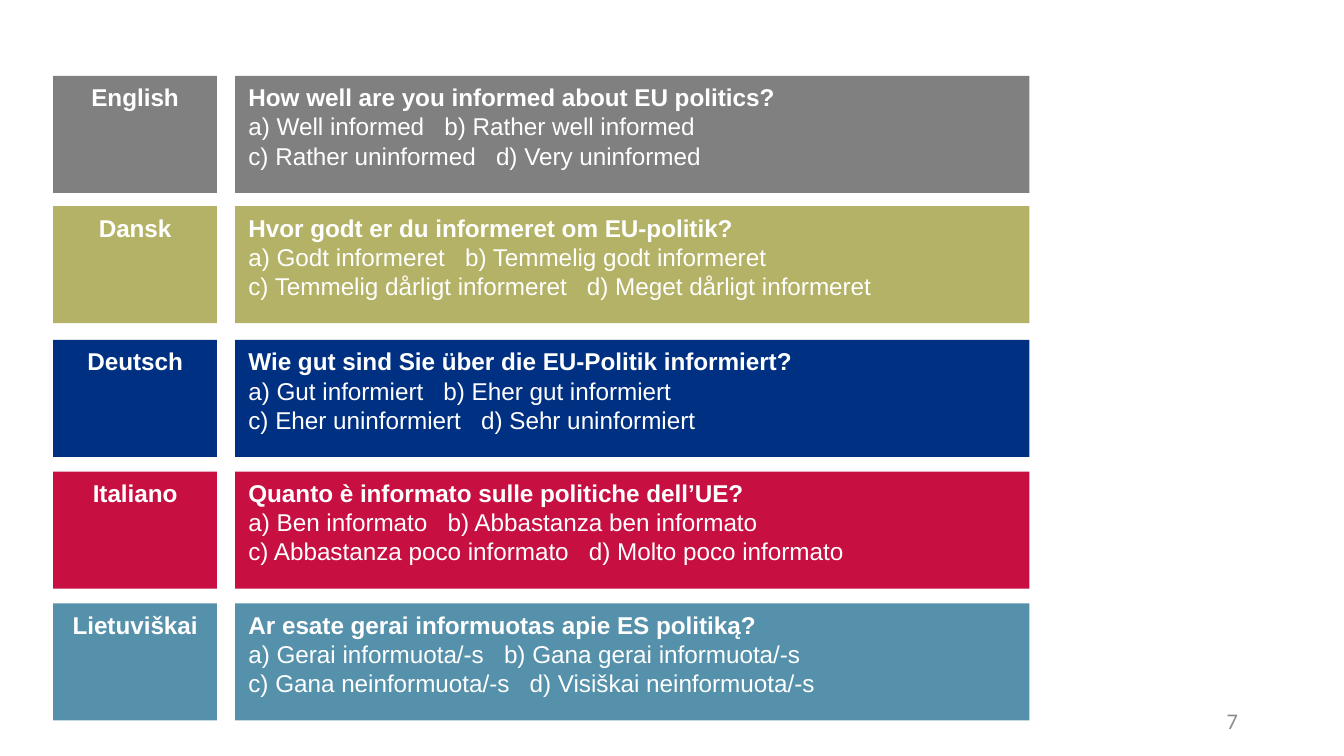
from dataclasses import dataclass

from pptx import Presentation
from pptx.dml.color import RGBColor
from pptx.enum.shapes import MSO_SHAPE
from pptx.enum.text import MSO_ANCHOR, PP_ALIGN
from pptx.util import Emu, Pt

SCALE = 4572  # EMU in one px, 200 px to the inch


@dataclass(frozen=True)
class Theme:
    white: str = "FFFFFF"
    muted: str = "8C8C8C"
    font: str = "Arial"
    number_font: str = "Calibri"
    body: int = 13
    small: int = 12


THEME = Theme()

HEIGHT = 174
LABEL = (79, 244)  # left, width
CARD = (350, 1182)

# top, fill, language, paragraphs of the card
ROWS = [
    (113, "808080", "English",
     "How well are you informed about EU politics?",
     "a) Well informed   b) Rather well informed",
     "c) Rather uninformed   d) Very uninformed"),
    (307, "B4B266", "Dansk",
     "Hvor godt er du informeret om EU-politik?\n"
     "a) Godt informeret   b) Temmelig godt informeret",
     "c) Temmelig dårligt informeret   d) Meget dårligt informeret"),
    (506, "003082", "Deutsch",
     "Wie gut sind Sie über die EU-Politik informiert?\n"
     "a) Gut informiert   b) Eher gut informiert",
     "c) Eher uninformiert   d) Sehr uninformiert"),
    (702, "C80F41", "Italiano",
     "Quanto è informato sulle politiche dell’UE?",
     "a) Ben informato   b) Abbastanza ben informato",
     "c) Abbastanza poco informato   d) Molto poco informato"),
    (898, "5591AA", "Lietuviškai",
     "Ar esate gerai informuotas apie ES politiką?\n"
     "a) Gerai informuota/-s   b) Gana gerai informuota/-s",
     "c) Gana neinformuota/-s   d) Visiškai neinformuota/-s"),
]


def px(*sizes):
    return [Emu(size * SCALE) for size in sizes]


def write(shape, texts, *, size=THEME.body, font=THEME.font,
          color=THEME.white, align=PP_ALIGN.LEFT, anchor=MSO_ANCHOR.TOP,
          bold=True):
    """Write one paragraph a text; bold applies to the first line only."""
    frame = shape.text_frame
    frame.word_wrap = True
    frame.vertical_anchor = anchor
    for i, text in enumerate(texts):
        para = frame.add_paragraph() if i else frame.paragraphs[0]
        para.alignment = align
        for j, line in enumerate(text.split("\n")):
            if j:
                para.add_line_break()
            run = para.add_run()
            run.text = line
            run.font.name = font
            run.font.size = Pt(size)
            run.font.bold = bold and i == j == 0
            run.font.color.rgb = RGBColor.from_string(color)


def add_box(slide, column, top, fill, texts, **style):
    left, width = column
    box = slide.shapes.add_shape(
        MSO_SHAPE.RECTANGLE, *px(left, top, width, HEIGHT))
    box.shadow.inherit = False
    box.fill.solid()
    box.fill.fore_color.rgb = RGBColor.from_string(fill)
    box.line.fill.background()
    write(box, texts, **style)


def add_number(slide, number):
    box = slide.shapes.add_textbox(*px(1412, 1042, 450, 60))
    write(box, [number], size=THEME.small, font=THEME.number_font,
          color=THEME.muted, align=PP_ALIGN.RIGHT, anchor=MSO_ANCHOR.MIDDLE,
          bold=False)


def main():
    deck = Presentation()
    deck.slide_width, deck.slide_height = px(2000, 1125)
    slide = deck.slides.add_slide(deck.slide_layouts[6])
    for top, fill, language, *texts in ROWS:
        add_box(slide, LABEL, top, fill, [language], align=PP_ALIGN.CENTER)
        add_box(slide, CARD, top, fill, texts)
    add_number(slide, "7")
    deck.save("out.pptx")


if __name__ == "__main__":
    main()
